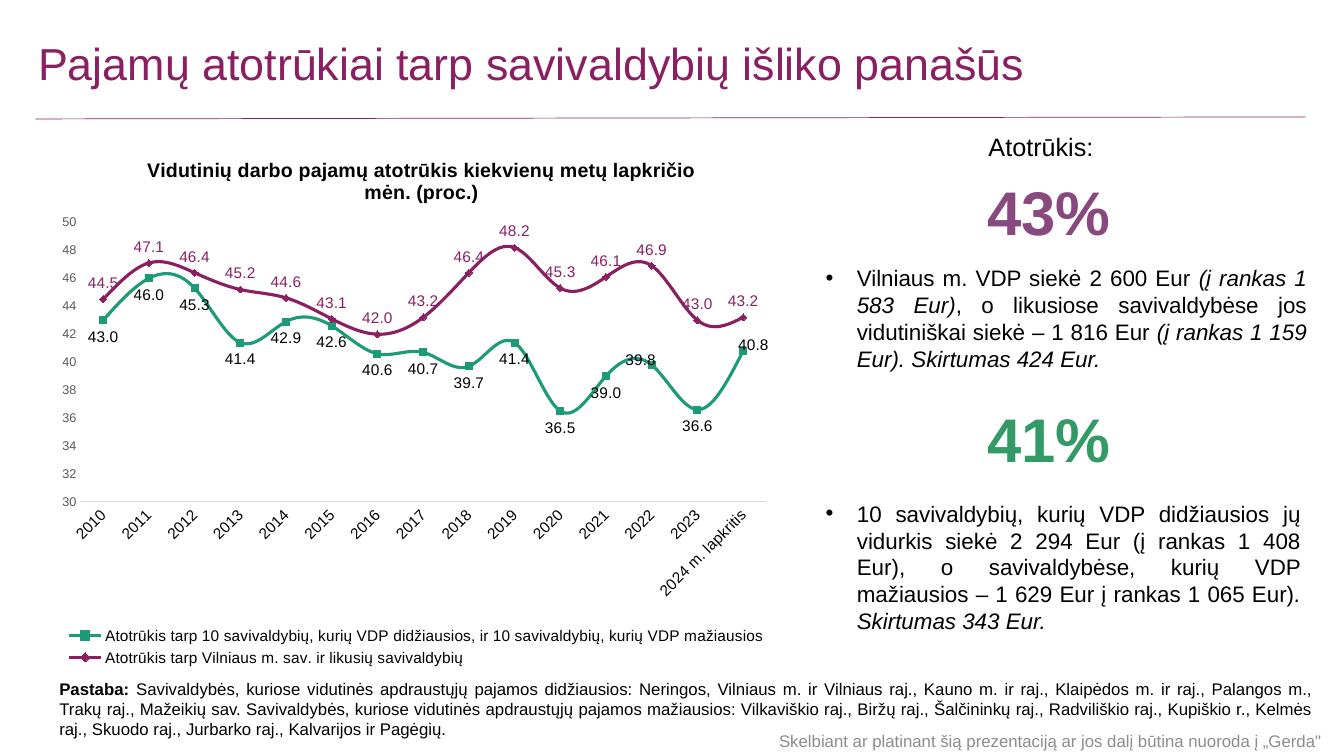
from lxml.etree import SubElement
from pptx import Presentation
from pptx.chart.data import CategoryChartData
from pptx.dml.color import RGBColor
from pptx.enum.chart import XL_CHART_TYPE, XL_LABEL_POSITION, XL_LEGEND_POSITION, XL_TICK_MARK
from pptx.enum.shapes import MSO_CONNECTOR
from pptx.enum.text import MSO_ANCHOR, MSO_AUTO_SIZE, PP_ALIGN
from pptx.oxml.ns import qn
from pptx.util import Inches, Pt

PURPLE, GREEN, BLACK = "8A2062", "1D9A78", "000000"
YEARS = [str(year) for year in range(2010, 2024)] + ["2024 m. lapkritis"]
SERIES = [
    {"name": "Atotrūkis tarp 10 savivaldybių, kurių VDP didžiausios, ir 10 savivaldybių, kurių VDP mažiausios",
     "values": [43, 46, 45.3, 41.4, 42.9, 42.6, 40.6, 40.7, 39.7, 41.4, 36.5, 39, 39.8, 36.6, 40.8],
     "line": GREEN, "label": BLACK, "position": XL_LABEL_POSITION.BELOW,
     "moved": {12: (-0.015, -0.04), 14: (0.014, -0.043)}},
    {"name": "Atotrūkis tarp Vilniaus m. sav. ir likusių savivaldybių",
     "values": [44.5, 47.1, 46.4, 45.2, 44.6, 43.1, 42, 43.2, 46.4, 48.2, 45.3, 46.1, 46.9, 43, 43.2],
     "line": PURPLE, "label": PURPLE, "position": XL_LABEL_POSITION.ABOVE, "moved": {}},
]
CHART_TITLE = "Vidutinių darbo pajamų atotrūkis kiekvienų metų lapkričio mėn. (proc.)"
VILNIUS = [
    ("Vilniaus m. VDP siekė 2 600 Eur ", {}),
    ("(į rankas 1 583 Eur)", {"italic": True}),
    (", o likusiose savivaldybėse jos vidutiniškai siekė – 1 816 Eur ", {}),
    ("(į rankas 1 159 Eur). Skirtumas 424 Eur.", {"italic": True}),
]
TEN_MUNICIPALITIES = [
    ("10 savivaldybių, kurių VDP didžiausios jų vidurkis siekė 2 294 Eur (į rankas 1 408 Eur), "
     "o savivaldybėse, kurių VDP mažiausios – 1 629 Eur į rankas 1 065 Eur)", {}),
    (". Skirtumas 343 Eur.", {"italic": True}),
]
NOTE = [
    ("Pastaba: ", {"bold": True}),
    ("Savivaldybės, kuriose vidutinės apdraustųjų pajamos didžiausios: Neringos, Vilniaus m. ir Vilniaus raj., "
     "Kauno m. ir raj., Klaipėdos m. ir raj., Palangos m., Trakų raj., Mažeikių sav. Savivaldybės, kuriose "
     "vidutinės apdraustųjų pajamos mažiausios: Vilkaviškio raj., Biržų raj., Šalčininkų raj., Radviliškio raj., "
     "Kupiškio r., Kelmės raj., Skuodo raj., Jurbarko raj., Kalvarijos ir Pagėgių.", {}),
]
DISCLAIMER = "Skelbiant ar platinant šią prezentaciją ar jos dalį būtina nuoroda į „Gerda\""


def color(value):
    """Turn a hex string into a colour."""
    return RGBColor.from_string(value)


def style_font(font, size, fill=BLACK, **formats):
    """Set the typeface, size, colour and other formats of a font."""
    for name, value in {"name": "Arial", "size": Pt(size), **formats}.items():
        setattr(font, name, value)
    font.fill.solid()
    font.fill.fore_color.rgb = color(fill)


def add_text(slide, box, runs, size, fill=BLACK, align=PP_ALIGN.LEFT, wrap=True, grow=True, **formats):
    """Add a one-paragraph text box and return its paragraph."""
    frame = slide.shapes.add_textbox(*map(Inches, box)).text_frame
    frame.word_wrap = wrap
    frame.auto_size = MSO_AUTO_SIZE.SHAPE_TO_FIT_TEXT if grow else MSO_AUTO_SIZE.NONE
    frame.vertical_anchor = MSO_ANCHOR.TOP if grow else MSO_ANCHOR.MIDDLE
    paragraph = frame.paragraphs[0]
    paragraph.alignment = align
    for text, extra in [(runs, {})] if isinstance(runs, str) else runs:
        run = paragraph.add_run()
        run.text = text
        style_font(run.font, size, fill, **formats, **extra)
    return paragraph


def add_bullet(slide, box, runs):
    """Add a justified text box with a hanging bullet."""
    paragraph = add_text(slide, box, runs, 16, align=PP_ALIGN.JUSTIFY)
    properties = paragraph._p.get_or_add_pPr()
    properties.set("marL", str(Inches(0.31)))
    properties.set("indent", str(-Inches(0.31)))
    SubElement(properties, qn("a:buFont")).set("typeface", "Arial")
    SubElement(properties, qn("a:buChar")).set("char", "•")


def manual_layout(parent, index, **settings):
    """Put a manual layout at the given place among the children of a chart part."""
    for old in parent.findall(qn("c:layout")):
        parent.remove(old)
    layout = SubElement(parent, qn("c:layout"))
    manual = SubElement(layout, qn("c:manualLayout"))
    for name, value in settings.items():
        SubElement(manual, qn(f"c:{name}")).set("val", str(value))
    parent.insert(index, layout)


def add_heading(slide, left, top, width):
    """Add the slide title and the rule under it."""
    paragraph = add_text(slide, (left, top, width, 0.89), "Pajamų atotrūkiai tarp savivaldybių išliko panašūs",
                         32, PURPLE, grow=False)
    paragraph.line_spacing = 0.9
    ends = (left + 0.07, top + 0.97, left + 12.67, top + 0.95)
    rule = slide.shapes.add_connector(MSO_CONNECTOR.STRAIGHT, *map(Inches, ends))
    rule.line.color.rgb = color(PURPLE)
    rule.line.width = Pt(0.5)
    SubElement(rule._element.spPr, qn("a:effectLst"))


def style_series(series, options):
    """Style one line and its value labels."""
    series.smooth = True
    series.format.line.color.rgb = color(options["line"])
    series.format.line.width = Pt(2.25)
    series.marker.style = None
    labels = series.data_labels
    settings = {"show_value": True, "position": options["position"],
                "number_format": "0.0", "number_format_is_linked": False}
    for name, value in settings.items():
        setattr(labels, name, value)
    style_font(labels.font, 11, options["label"])
    for index, (x, y) in options["moved"].items():
        label = series.points[index].data_label
        style_font(label.font, 11, options["label"])
        label.position = options["position"]
        element = labels._element.xpath(f"c:dLbl[c:idx/@val='{index}']")[0]
        manual_layout(element, 1, x=x, y=y)


def style_axes(chart):
    """Style the year axis and the percentage axis."""
    years, percent = chart.category_axis, chart.value_axis
    for axis, size, fill in ((years, 11, BLACK), (percent, 9, "595959")):
        axis.major_tick_mark = axis.minor_tick_mark = XL_TICK_MARK.NONE
        axis.has_major_gridlines = False
        style_font(axis.tick_labels.font, size, fill)
    years.format.line.color.rgb = color("D9D9D9")
    years.format.line.width = Pt(0.75)
    years._element.txPr.bodyPr.set("rot", "-2700000")
    percent.format.line.fill.background()
    for name, value in {"minimum_scale": 30, "maximum_scale": 50, "major_unit": 2}.items():
        setattr(percent, name, value)
    percent.tick_labels.number_format = "0"
    percent.tick_labels.number_format_is_linked = False


def add_gap_chart(slide, box):
    """Add the line chart of the income gaps."""
    data = CategoryChartData()
    data.categories = YEARS
    for options in SERIES:
        data.add_series(options["name"], options["values"])
    chart = slide.shapes.add_chart(XL_CHART_TYPE.LINE, *map(Inches, box), data).chart
    style_font(chart.font, 10)
    chart.has_title = True
    paragraph = chart.chart_title.text_frame.paragraphs[0]
    run = paragraph.add_run()
    run.text = CHART_TITLE
    style_font(run.font, 14, bold=True)
    manual_layout(chart.chart_title._element, 1, xMode="edge", yMode="edge", x=0.128, y=0.037)
    chart.has_legend = True
    chart.legend.position = XL_LEGEND_POSITION.BOTTOM
    chart.legend.include_in_layout = False
    style_font(chart.legend.font, 11)
    style_axes(chart)
    chart.plots[0].vary_by_categories = False
    for series, options in zip(chart.plots[0].series, SERIES):
        style_series(series, options)
    manual_layout(chart._chartSpace.chart.plotArea, 0, layoutTarget="inner", xMode="edge", yMode="edge",
                  x=0.042, y=0.165, w=0.933, h=0.521)


def add_gap_summary(slide, left, top):
    """Add the two headline percentages with their explanations."""
    center = {"align": PP_ALIGN.CENTER, "wrap": False}
    add_text(slide, (left + 1.59, top, 1.29, 0.4), "Atotrūkis:", 18, **center)
    groups = (("43%", "87497E", 0.43, VILNIUS, 1.32, 4.97),
              ("41%", "339966", 2.68, TEN_MUNICIPALITIES, 3.66, 4.91))
    for figure, fill, figure_top, runs, text_top, width in groups:
        add_text(slide, (left + 1.59, top + figure_top, 1.45, 0.84), figure, 44, fill, bold=True, **center)
        add_bullet(slide, (left, top + text_top, width, 1.18), runs)


def add_footer(slide, left, top):
    """Add the note and the citation request."""
    add_text(slide, (left, top, 12.64, 0.71), NOTE, 12, align=PP_ALIGN.JUSTIFY)
    add_text(slide, (left + 7.02, top + 0.47, 5.82, 0.4), DISCLAIMER, 12, "8C8C8C",
             align=PP_ALIGN.CENTER, grow=False)


def main():
    """Build and save the slide."""
    presentation = Presentation()
    presentation.slide_width, presentation.slide_height = Inches(13.33), Inches(7.5)
    slide = presentation.slides.add_slide(presentation.slide_layouts[6])
    add_heading(slide, 0.28, 0.21, 12.78)
    add_gap_chart(slide, (0.49, 1.33, 7.29, 5.32))
    add_gap_summary(slide, 8.09, 1.25)
    add_footer(slide, 0.49, 6.68)
    presentation.save("out.pptx")


if __name__ == "__main__":
    main()
